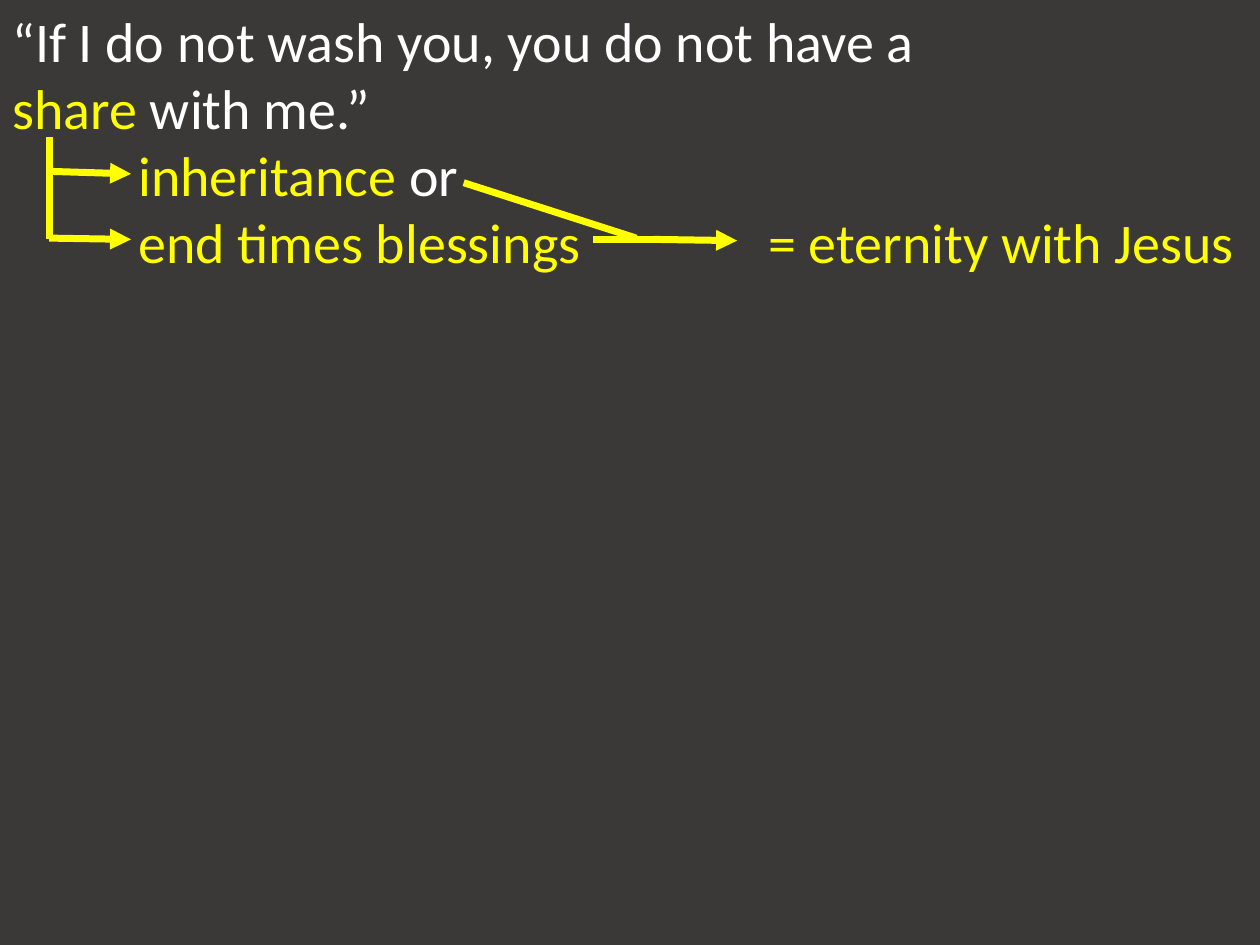
from lxml import etree
from pptx import Presentation
from pptx.dml.color import RGBColor
from pptx.enum.shapes import MSO_CONNECTOR
from pptx.enum.text import MSO_AUTO_SIZE
from pptx.oxml.ns import qn
from pptx.util import Inches, Pt

STRAIGHT = MSO_CONNECTOR.STRAIGHT
GROW = MSO_AUTO_SIZE.SHAPE_TO_FIT_TEXT
WHITE, YELLOW, CHARCOAL = "FFFFFF", "FFFF00", "3B3838"


def rgb(value):
    return RGBColor.from_string(value)


def add_line(shapes, x1, y1, x2, y2, arrow=False):
    """Draw a yellow line, with an arrowhead at its end if asked."""
    line = shapes.add_connector(STRAIGHT, Inches(x1), Inches(y1), Inches(x2), Inches(y2))
    line.line.color.rgb = rgb(YELLOW)
    line.line.width = Pt(4)
    if arrow:
        etree.SubElement(line.line._get_or_add_ln(), qn("a:tailEnd"), type="triangle")
    etree.SubElement(line._element.spPr, qn("a:effectLst"))


prs = Presentation()
prs.slide_width, prs.slide_height = Inches(10), Inches(7.5)
s = prs.slides.add_slide(prs.slide_layouts[6])
s.background.fill.solid()
s.background.fill.fore_color.rgb = rgb(CHARCOAL)

# Verse and the meanings of "share", with a tab stop at every inch
verse = [
    [("“", WHITE, 31), ("If I do not wash you, you do not have a", WHITE, 32)],
    [("share", YELLOW, 32), (" with me.”", WHITE, 32)],
    [("\tinheritance", YELLOW, 32), (" or", WHITE, 32)],
    [("\tend times blessings\t\t= eternity with Jesus", YELLOW, 32)],
]
tf = s.shapes.add_textbox(0, 0, Inches(10), Inches(2.26)).text_frame
tf.word_wrap = True
tf.auto_size = GROW
for i, runs in enumerate(verse):
    p = tf.add_paragraph() if i else tf.paragraphs[0]
    tabs = etree.SubElement(p._p.get_or_add_pPr(), qn("a:tabLst"))
    for inch in range(1, 10):
        etree.SubElement(tabs, qn("a:tab"), pos=str(Inches(inch)), algn="l")
    for text, color, size in runs:
        r = p.add_run()
        r.text = text
        r.font.name = "Calibri"
        r.font.size = Pt(size)
        r.font.color.rgb = rgb(color)

# Bracket from "share" to its two meanings
bracket = s.shapes.add_group_shape().shapes
add_line(bracket, 0.39, 1.09, 0.39, 1.9)
add_line(bracket, 0.39, 1.36, 1.04, 1.38, arrow=True)
add_line(bracket, 0.39, 1.89, 1.04, 1.9, arrow=True)

# Both meanings lead to eternity
add_line(s.shapes, 5.19, 1.9, 5.85, 1.91, arrow=True)
add_line(s.shapes, 3.68, 1.45, 5.05, 1.89)
add_line(s.shapes, 4.71, 1.9, 5.38, 1.9)

prs.save("out.pptx")
